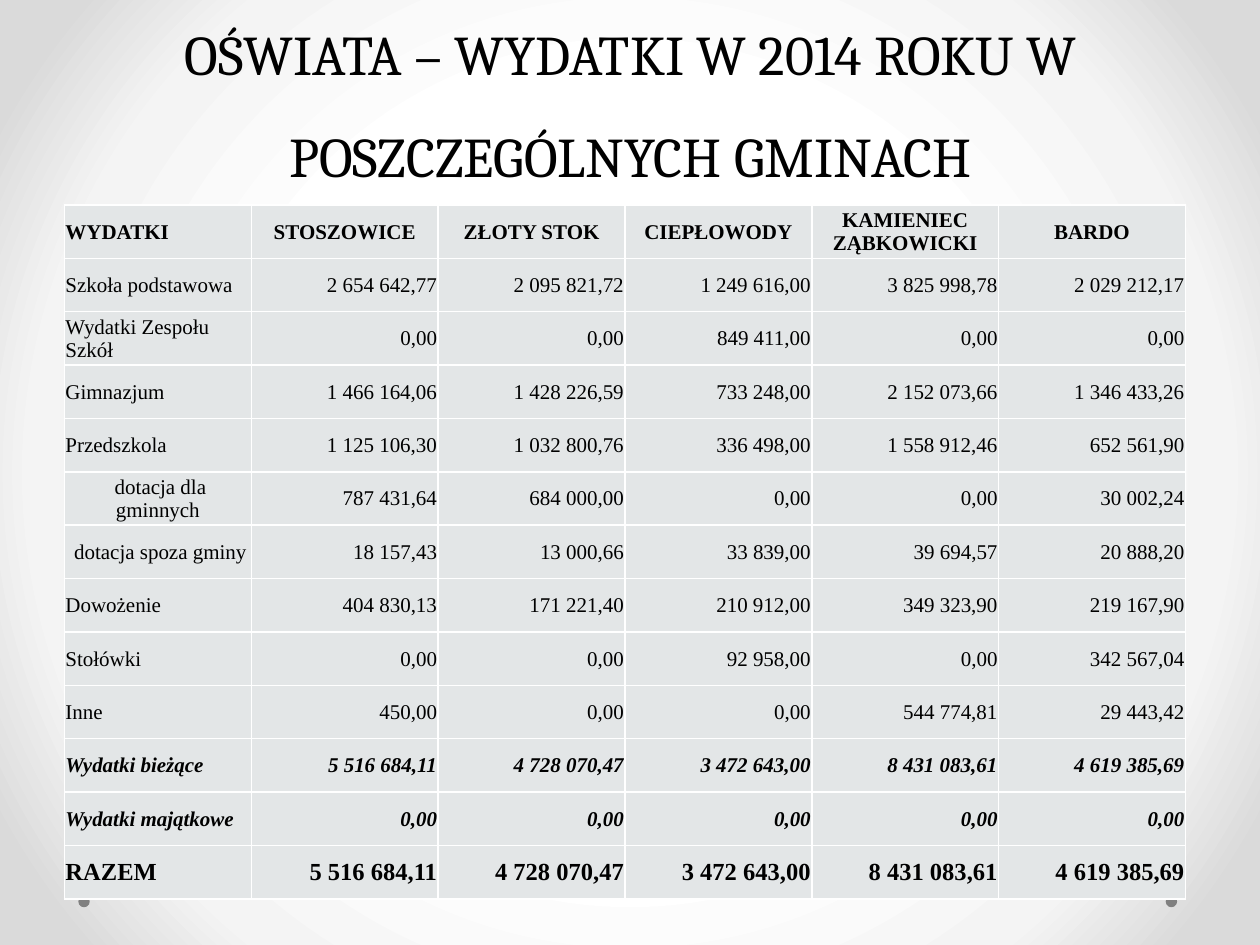
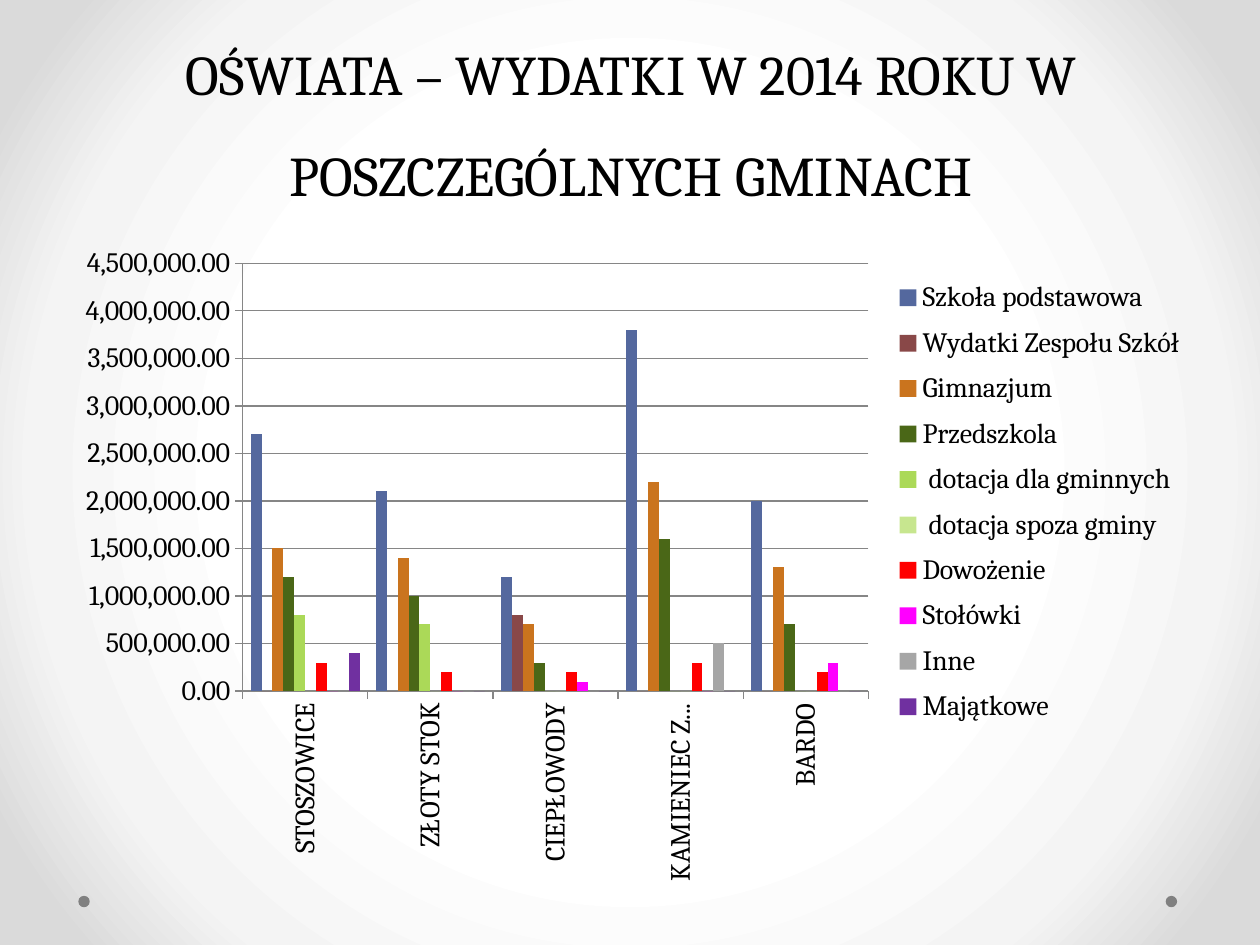
from pptx import Presentation, util as u
from pptx.chart.data import CategoryChartData
from pptx.dml.color import RGBColor
from pptx.enum import chart as charts, shapes, text
from pptx.oxml import parse_xml
from pptx.oxml.ns import nsdecls, qn

TITLE = "OŚWIATA – WYDATKI W 2014 ROKU W POSZCZEGÓLNYCH GMINACH"
COMMUNES = ["STOSZOWICE", "ZŁOTY STOK", "CIEPŁOWODY", "KAMIENIEC ZĄBKOWICKI", "BARDO"]
EXPENSES = {
    "Szkoła podstawowa": (2654642.77, 2095821.72, 1249616, 3825998.78, 2029212.17),
    "Wydatki Zespołu Szkół": (0, 0, 849411, 0, 0),
    "Gimnazjum": (1466164.06, 1428226.59, 733248, 2152073.66, 1346433.26),
    "Przedszkola": (1125106.30, 1032800.76, 336498, 1558912.46, 652561.90),
    " dotacja dla gminnych": (787431.64, 684000, 0, 0, 30002.24),
    " dotacja spoza gminy": (18157.43, 13000.66, 33839, 39694.57, 20888.20),
    "Dowożenie": (404830.13, 171221.40, 210912, 349323.90, 219167.90),
    "Stołówki": (0, 0, 92958, 0, 342567.04),
    "Inne": (450, 0, 0, 544774.81, 29443.42),
    "Wydatki bieżące": (5516684.11, 4728070.47, 3472643, 8431083.61, 4619385.69),
    "Wydatki majątkowe": (0, 0, 0, 0, 0),
    "RAZEM": (5516684.11, 4728070.47, 3472643, 8431083.61, 4619385.69),
}
# Chart values in hundreds of thousands, and the colour of each series
SERIES = [
    ("Szkoła podstawowa", (27, 21, 12, 38, 20), "54689E"),
    ("Wydatki Zespołu Szkół", (0, 0, 8, 0, 0), "894848"),
    ("Gimnazjum", (15, 14, 7, 22, 13), "CA741E"),
    ("Przedszkola", (12, 10, 3, 16, 7), "4A6717"),
    (" dotacja dla gminnych", (8, 7, 0, 0, 0), "ABD958"),
    (" dotacja spoza gminy", (0, 0, 0, 0, 0), "C7E68F"),
    ("Dowożenie", (3, 2, 2, 3, 2), "FF0000"),
    ("Stołówki", (0, 0, 1, 0, 3), "FF00FF"),
    ("Inne", (0, 0, 0, 5, 0), "A6A6A6"),
    ("Majątkowe", (4, 0, 0, 0, 0), "7030A0"),
]
COLOURS = {"text": "000000", "dot": "808080", "cell": "E3E6E7", "border": "FFFFFF",
           "grid": "868686"}
BACKGROUND = [(50, "FFFFFF"), (76, "F4F4F4"), (92, "DADADA")]
# Shares of the chart's width and height
PLOT = {"x": 0.157, "y": 0.043, "w": 0.552, "h": 0.63}
LEGEND = {"x": 0.73, "y": 0.05, "w": 0.26, "h": 0.69}
LEFT = u.Cm(1.3)


def colour(name):
    return RGBColor.from_string(COLOURS[name])


def set_font(font, name, size):
    font.name, font.size = name, u.Pt(size)
    font.color.rgb = colour("text")


def style_master(master, slide):
    """Give the master its round gradient and the two dots at the foot."""
    master.background.fill.gradient()
    linear = master.element.xpath(".//p:bgPr/a:gradFill")[0]
    stops = "".join(f'<a:gs pos="{position * 1000}"><a:srgbClr val="{value}"/></a:gs>'
                    for position, value in BACKGROUND)
    linear.getparent().replace(linear, parse_xml(
        f'<a:gradFill {nsdecls("a")} rotWithShape="1"><a:gsLst>{stops}</a:gsLst>'
        '<a:path path="circle"><a:fillToRect l="50000" t="50000" r="50000" b="50000"/>'
        '</a:path></a:gradFill>'))
    for number, left in enumerate((23.5, 1.58)):
        dot = slide.shapes.add_shape(shapes.MSO_SHAPE.OVAL, u.Cm(left), u.Cm(18.06),
                                     u.Cm(0.23), u.Cm(0.23))
        dot.shadow.inherit = False
        dot.fill.solid()
        dot.fill.fore_color.rgb = colour("dot")
        dot.line.fill.background()
        dot.element.nvSpPr.cNvPr.id = 20 + number
        master.element.cSld.spTree.append(dot.element)


def add_title(slide, top, height, width):
    title = slide.shapes.title
    title.left, title.top = LEFT, u.Cm(top)
    title.width, title.height = u.Cm(width), u.Cm(height)
    frame = title.text_frame
    frame.text = TITLE
    frame.auto_size = text.MSO_AUTO_SIZE.NONE
    frame.vertical_anchor = text.MSO_ANCHOR.BOTTOM
    paragraph = frame.paragraphs[0]
    paragraph.alignment = text.PP_ALIGN.CENTER
    paragraph.line_spacing = u.Pt(58)
    set_font(paragraph.font, "Cambria", 32)


def polish_number(value):
    return f"{value:,.2f}".replace(",", " ").replace(".", ",")


def fill_cell(cell, content, alignment, size, bold, italic):
    cell.text = content
    cell.vertical_anchor = text.MSO_ANCHOR.MIDDLE
    cell.margin_left = cell.margin_right = cell.margin_top = u.Cm(0.02)
    cell.margin_bottom = 0
    paragraph = cell.text_frame.paragraphs[0]
    paragraph.alignment = alignment
    set_font(paragraph.font, "Times New Roman", size)
    paragraph.font.bold, paragraph.font.italic = bold, italic
    properties = cell._tc.get_or_add_tcPr()
    for side in ("lnL", "lnR", "lnT", "lnB"):
        properties.append(parse_xml(
            f'<a:{side} {nsdecls("a")} w="12700"><a:solidFill>'
            f'<a:srgbClr val="{COLOURS["border"]}"/></a:solidFill></a:{side}>'))
    cell.fill.solid()
    cell.fill.fore_color.rgb = colour("cell")


def add_expense_table(slide):
    rows = [["WYDATKI", *COMMUNES]]
    rows += [[label, *map(polish_number, values)] for label, values in EXPENSES.items()]
    table = slide.shapes.add_table(len(rows), len(rows[0]), LEFT, u.Cm(4.13),
                                   u.Cm(22.6), u.Cm(14)).table
    for row_index, row in enumerate(rows):
        table.rows[row_index].height = u.Cm(14 / len(rows))
        header, total = row_index == 0, row[0] == "RAZEM"
        subtotal = row[0] in ("Wydatki bieżące", "Wydatki majątkowe")
        for column, content in enumerate(row):
            if column == 0:
                centred = content.startswith(" ")
                alignment = text.PP_ALIGN.CENTER if centred else text.PP_ALIGN.LEFT
            else:
                alignment = text.PP_ALIGN.CENTER if header else text.PP_ALIGN.RIGHT
            fill_cell(table.cell(row_index, column), content, alignment,
                      14 if total else 12, header or total or subtotal, subtotal)


def place_part(part, shares, position, target=""):
    """Fix a chart part at shares of the chart's size."""
    for layout in part.findall(qn("c:layout")):
        part.remove(layout)
    sizes = "".join(f'<c:{key} val="{share}"/>' for key, share in shares.items())
    part.insert(position, parse_xml(
        f'<c:layout {nsdecls("c")}><c:manualLayout>{target}'
        f'<c:xMode val="edge"/><c:yMode val="edge"/>{sizes}</c:manualLayout></c:layout>'))


def add_expense_chart(slide):
    data = CategoryChartData(number_format="#,##0.00")
    data.categories = COMMUNES
    for name, values, _ in SERIES:
        data.add_series(name, [value * 100000 for value in values])
    chart = slide.shapes.add_chart(charts.XL_CHART_TYPE.COLUMN_CLUSTERED, LEFT, u.Cm(4.72),
                                   u.Cm(22.86), u.Cm(13.69), data).chart
    set_font(chart.font, "Cambria", 16)
    chart.has_title = False
    chart.has_legend = True
    chart.legend.position = charts.XL_LEGEND_POSITION.RIGHT
    chart.legend.include_in_layout = False

    plot = chart.plots[0]
    plot.gap_width, plot.overlap = 150, 0
    plot.vary_by_categories = False
    for series, (_, _, value) in zip(plot.series, SERIES):
        series.format.fill.solid()
        series.format.fill.fore_color.rgb = RGBColor.from_string(value)

    for axis in (chart.category_axis, chart.value_axis):
        axis.major_tick_mark = charts.XL_TICK_MARK.OUTSIDE
        axis.format.line.color.rgb = colour("grid")
        set_font(axis.tick_labels.font, "Cambria", 16)
    label_body = chart.category_axis._element.find(qn("c:txPr")).find(qn("a:bodyPr"))
    label_body.set("rot", "-5400000")
    value_axis = chart.value_axis
    value_axis.maximum_scale, value_axis.major_unit = 4500000, 500000
    value_axis.minimum_scale = 0
    value_axis.has_major_gridlines = True
    value_axis.major_gridlines.format.line.color.rgb = colour("grid")
    value_axis.tick_labels.number_format = "#,##0.00"
    value_axis.tick_labels.number_format_is_linked = False

    place_part(chart._chartSpace.chart.plotArea, PLOT, 0, '<c:layoutTarget val="inner"/>')
    place_part(chart.legend._element, LEGEND, 1)


def main():
    presentation = Presentation()
    presentation.slide_width, presentation.slide_height = u.Cm(25.4), u.Cm(19.05)
    title_only = presentation.slide_layouts[5]

    table_slide = presentation.slides.add_slide(title_only)
    style_master(presentation.slide_master, table_slide)
    add_title(table_slide, 0, 3.93, 22.83)
    add_expense_table(table_slide)

    chart_slide = presentation.slides.add_slide(title_only)
    add_title(chart_slide, 0.33, 3.99, 22.86)
    add_expense_chart(chart_slide)
    presentation.save("out.pptx")


if __name__ == "__main__":
    main()
